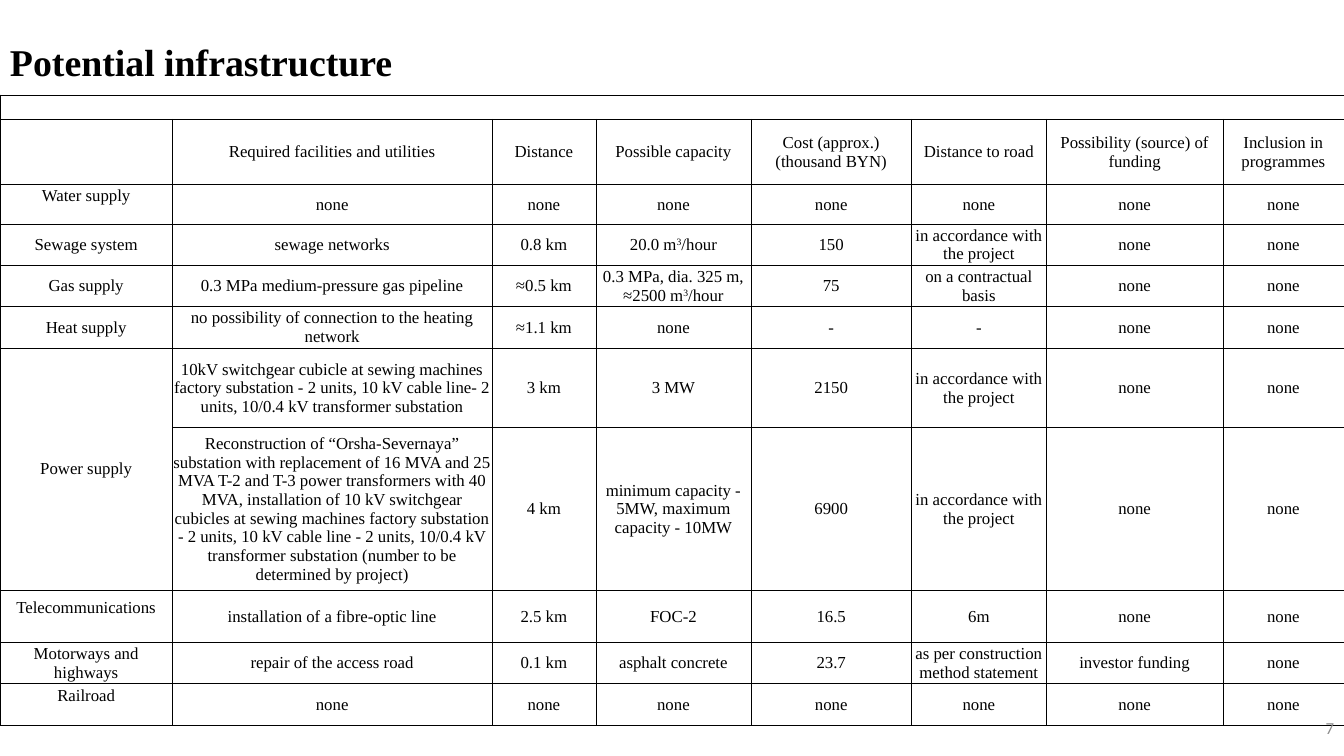
from dataclasses import dataclass

from lxml.etree import SubElement
from pptx import Presentation
from pptx.dml.color import RGBColor as Rgb
from pptx.enum.text import MSO_ANCHOR as Anchor, PP_ALIGN as Align
from pptx.oxml.ns import qn
from pptx.util import Inches, Pt


@dataclass(frozen=True)
class Theme:
    ink: str = "000000"
    muted: str = "8C8C8C"
    text_font: str = "Times New Roman"
    number_font: str = "Calibri"
    title_size: float = 27
    body_size: float = 12
    border_width: float = 0.25


NONE = "none"
PROJECT = "in accordance with the project"
COLUMN_WIDTHS = [1.71, 3.17, 1.03, 1.54, 1.59, 1.34, 1.75, 1.2]
ROW_HEIGHTS = [0.24, 0.65, 0.38, 0.38, 0.38, 0.38, 0.79, 1.5, 0.52, 0.38, 0.41]
RAISED_LABELS = {"Water supply", "Telecommunications", "Railroad"}

# A caret encloses superscript text
ROWS = [
    [""] * 8,
    ["", "Required facilities and utilities", "Distance", "Possible capacity",
     "Cost (approx.) (thousand BYN)", "Distance to road",
     "Possibility (source) of funding", "Inclusion in programmes"],
    ["Water supply"] + [NONE] * 7,
    ["Sewage system", "sewage networks", "0.8 km", "20.0 m^3^/hour", "150",
     PROJECT, NONE, NONE],
    ["Gas supply", "0.3 MPa medium-pressure gas pipeline", "≈0.5 km",
     "0.3 MPa, dia. 325 m, ≈2500 m^3^/hour", "75", "on a contractual basis",
     NONE, NONE],
    ["Heat supply", "no possibility of connection to the heating network",
     "≈1.1 km", NONE, "-", "-", NONE, NONE],
    ["Power supply",
     "10kV switchgear cubicle at sewing machines factory substation - 2 units, "
     "10 kV cable line- 2 units, 10/0.4 kV transformer substation",
     "3 km", "3 MW", "2150", PROJECT, NONE, NONE],
    ["",
     "Reconstruction of “Orsha-Severnaya” substation with replacement of 16 MVA "
     "and 25 MVA T-2 and T-3 power transformers with 40 MVA, installation of "
     "10 kV switchgear cubicles at sewing machines factory substation - 2 units, "
     "10 kV cable line - 2 units, 10/0.4 kV transformer substation "
     "(number to be determined by project)",
     "4 km", "minimum capacity - 5MW, maximum capacity - 10MW", "6900", PROJECT,
     NONE, NONE],
    ["Telecommunications", "installation of a fibre-optic line", "2.5 km",
     "FOC-2", "16.5", "6m", NONE, NONE],
    ["Motorways and highways", "repair of the access road", "0.1 km",
     "asphalt concrete", "23.7", "as per construction method statement",
     "investor funding", NONE],
    ["Railroad"] + [NONE] * 7,
]


class SlideBuilder:
    def __init__(self, slide, theme):
        self.slide = slide
        self.theme = theme

    def style(self, span, size, font, color, bold=False):
        span.font.size = Pt(size)
        span.font.name = font
        span.font.bold = bold
        span.font.color.rgb = Rgb.from_string(color)

    def text(self, words, left, top, width, height, align, **look):
        box = self.slide.shapes.add_textbox(
            Inches(left), Inches(top), Inches(width), Inches(height))
        frame = box.text_frame
        frame.word_wrap = True
        frame.vertical_anchor = Anchor.MIDDLE
        frame.text = words
        para = frame.paragraphs[0]
        para.alignment = align
        self.style(para.runs[0], **look)
        return para

    def border(self, cell):
        properties = cell._tc.get_or_add_tcPr()
        for side in ("a:lnL", "a:lnR", "a:lnT", "a:lnB"):
            line = SubElement(properties, qn(side),
                              w=str(Pt(self.theme.border_width)))
            fill = SubElement(line, qn("a:solidFill"))
            SubElement(fill, qn("a:srgbClr"), val=self.theme.ink)

    def cell(self, cell, words):
        theme = self.theme
        self.border(cell)
        cell.fill.background()
        cell.vertical_anchor = Anchor.MIDDLE
        cell.margin_left = cell.margin_right = cell.margin_top = Inches(0.01)
        cell.margin_bottom = Inches(0.18 if words in RAISED_LABELS else 0)
        para = cell.text_frame.paragraphs[0]
        para.alignment = Align.CENTER
        if not words:
            SubElement(para._p, qn("a:endParaRPr"), sz=str(theme.body_size * 100))
            return
        for index, part in enumerate(words.split("^")):
            span = para.add_run()
            span.text = part
            self.style(span, theme.body_size, theme.text_font, theme.ink)
            if index % 2:
                span.font._element.set("baseline", "30000")

    def table(self, rows, left, top, widths, heights):
        frame = self.slide.shapes.add_table(
            len(rows), len(widths), Inches(left), Inches(top),
            Inches(sum(widths)), Inches(sum(heights)))
        table = frame.table
        table.first_row = table.horz_banding = False
        for column, width in zip(table.columns, widths):
            column.width = Inches(width)
        for row, height, values in zip(table.rows, heights, rows):
            row.height = Inches(height)
            for cell, words in zip(row.cells, values):
                self.cell(cell, words)
        return table


def main():
    deck = Presentation()
    deck.slide_width, deck.slide_height = Inches(13.33), Inches(7.5)
    theme = Theme()
    page = SlideBuilder(deck.slides.add_slide(deck.slide_layouts[6]), theme)

    # Title
    title = page.text("Potential infrastructure", 0, 0.31, 12.05, 0.66, Align.LEFT,
                      size=theme.title_size, font=theme.text_font,
                      color=theme.ink, bold=True)
    title.line_spacing = 0.9

    # Infrastructure table: full-width top row, two-row power supply
    table = page.table(ROWS, 0, 0.94, COLUMN_WIDTHS, ROW_HEIGHTS)
    table.cell(0, 0).merge(table.cell(0, 7))
    table.cell(6, 0).merge(table.cell(7, 0))

    # Page number
    page.text("7", 10.33, 7.02, 3, 0.4, Align.RIGHT, size=theme.body_size,
              font=theme.number_font, color=theme.muted)

    deck.save("out.pptx")


if __name__ == "__main__":
    main()
